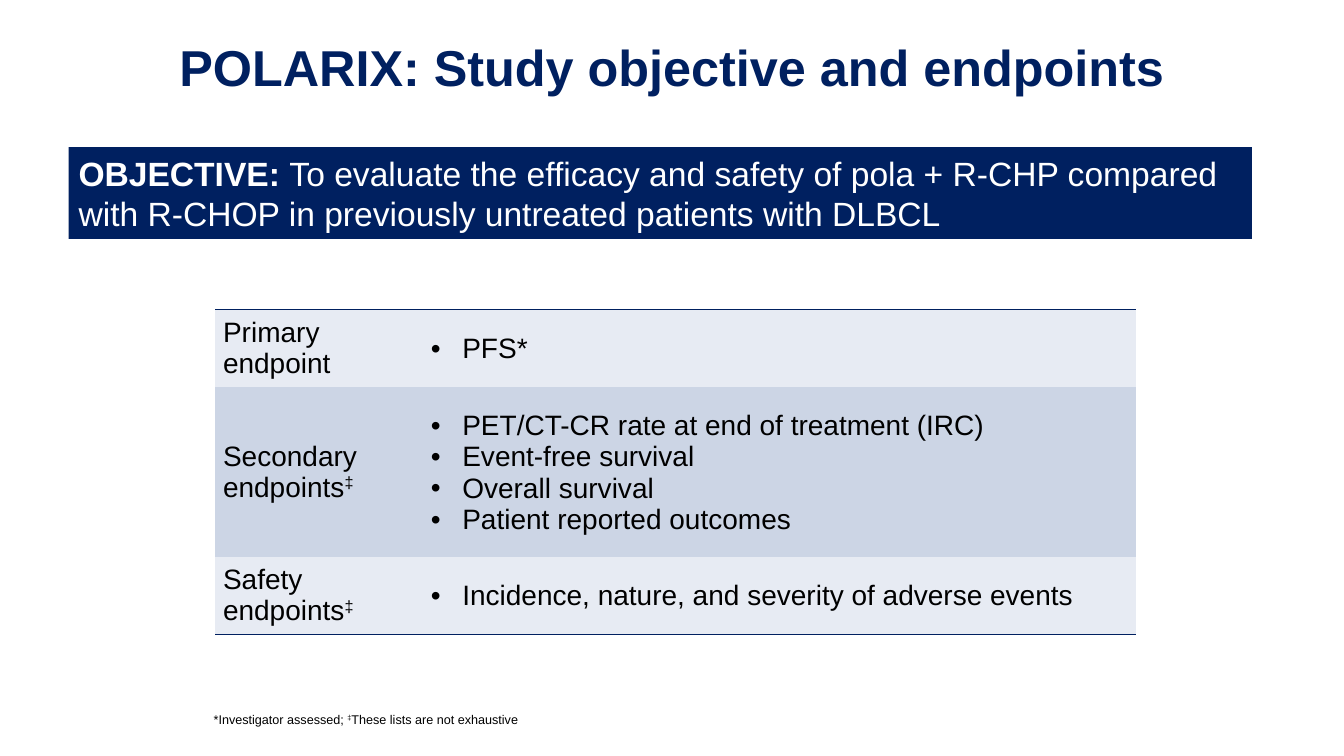
from lxml.etree import SubElement
from pptx import Presentation
from pptx.dml.color import RGBColor
from pptx.enum.shapes import MSO_SHAPE as Preset
from pptx.enum.text import MSO_ANCHOR as Anchor, MSO_AUTO_SIZE as AutoSize, PP_ALIGN as Align
from pptx.oxml import parse_xml
from pptx.oxml.ns import nsdecls, qn
from pptx.util import Cm, Pt

COLOURS = {"navy": "002060", "white": "FFFFFF", "black": "000000",
           "light": "E7EBF3", "dark": "CCD5E5"}
NO_STYLE = "{2D5ABB26-0587-4C30-8999-92F81FD0307C}"

# Label, footnote mark, bullet items
ENDPOINTS = [
    ("Primary endpoint", "", ["PFS*"]),
    ("Secondary endpoints", "‡", ["PET/CT-CR rate at end of treatment (IRC)",
                                  "Event-free survival",
                                  "Overall survival",
                                  "Patient reported outcomes"]),
    ("Safety endpoints", "‡", ["Incidence, nature, and severity of adverse events"]),
]


def rgb(name):
    return RGBColor.from_string(COLOURS[name])


def place(shape, left, top, width, height):
    shape.left, shape.top = Cm(left), Cm(top)
    shape.width, shape.height = Cm(width), Cm(height)


def add_run(para, text, size, colour="black", bold=False, raised=False):
    span = para.add_run()
    span.text = text
    font = span.font
    font.name, font.size, font.bold = "Arial", Pt(size), bold
    font.color.rgb = rgb(colour)
    if raised:
        span._r.get_or_add_rPr().set("baseline", "30000")


def set_bullet(para, char=None, indent=0):
    """Give the paragraph a bullet with a hanging indent, or none."""
    props = para._p.get_or_add_pPr()
    props.set("marL", str(Cm(indent)))
    props.set("indent", str(-Cm(indent)))
    if char:
        SubElement(props, qn("a:buFont"), typeface="Arial")
        SubElement(props, qn("a:buChar"), char=char)
    else:
        SubElement(props, qn("a:buNone"))


def fill_title(title):
    place(title, 1.47, 0.66, 30.94, 2.51)
    frame = title.text_frame
    frame.vertical_anchor = Anchor.MIDDLE
    para = frame.paragraphs[0]
    para.alignment = Align.CENTER
    para.line_spacing = Pt(30)
    add_run(para, "POLARIX: Study objective and endpoints", 36, "navy", bold=True)


def fill_footnote(body):
    place(body, 5.13, 17.45, 10.01, 0.99)
    frame = body.text_frame
    frame.vertical_anchor = Anchor.BOTTOM
    para = frame.paragraphs[0]
    set_bullet(para)
    add_run(para, "*Investigator assessed; ", 9)
    add_run(para, "‡", 9, raised=True)
    add_run(para, "These lists are not exhaustive", 9)


def add_objective(page):
    box = page.shapes.add_shape(Preset.RECTANGLE, Cm(1.73), Cm(3.71), Cm(29.82), Cm(2.31))
    box.shadow.inherit = False
    box.fill.solid()
    box.fill.fore_color.rgb = rgb("navy")
    box.line.fill.background()
    frame = box.text_frame
    frame.word_wrap = True
    frame.auto_size = AutoSize.SHAPE_TO_FIT_TEXT
    para = frame.paragraphs[0]
    para.alignment = Align.LEFT
    add_run(para, "OBJECTIVE: ", 24, "white", bold=True)
    add_run(para, "To evaluate the efficacy and safety of pola + R-CHP compared with "
                  "R-CHOP in previously untreated patients with DLBCL", 24, "white")


def format_cell(cell, colour, margins):
    cell.fill.solid()
    cell.fill.fore_color.rgb = rgb(colour)
    cell.vertical_anchor = Anchor.MIDDLE
    (cell.margin_left, cell.margin_top,
     cell.margin_right, cell.margin_bottom) = map(Cm, margins)


def add_border(cell, side):
    border = parse_xml(
        f'<a:{side} {nsdecls("a")} w="{Pt(1)}"><a:solidFill>'
        f'<a:srgbClr val="{COLOURS["navy"]}"/></a:solidFill></a:{side}>')
    cell._tc.get_or_add_tcPr().insert(0, border)


def add_endpoints(page):
    widths, heights = (5.41, 17.8), (1.96, 4.27, 1.96)
    frame = page.shapes.add_table(len(heights), len(widths), Cm(5.42), Cm(7.8),
                                  Cm(sum(widths)), Cm(sum(heights)))
    table = frame.table
    table.first_row = table.horz_banding = False
    table._tbl.tblPr.find(qn("a:tableStyleId")).text = NO_STYLE
    for column, width in zip(table.columns, widths):
        column.width = Cm(width)

    for index, (label, mark, items) in enumerate(ENDPOINTS):
        table.rows[index].height = Cm(heights[index])
        colour = ("light", "dark")[index % 2]
        label_cell, list_cell = table.cell(index, 0), table.cell(index, 1)
        format_cell(label_cell, colour, (0.2, 0.13, 0.2, 0.13))
        format_cell(list_cell, colour, (0.03, 0.03, 0.03, 0))

        para = label_cell.text_frame.paragraphs[0]
        add_run(para, label, 20)
        if mark:
            add_run(para, mark, 20, raised=True)

        lines = list_cell.text_frame
        for number, item in enumerate(items):
            para = lines.add_paragraph() if number else lines.paragraphs[0]
            set_bullet(para, "•", 0.79)
            add_run(para, item, 20)

    # Rules above and below the table
    for column in range(len(widths)):
        add_border(table.cell(0, column), "lnT")
        add_border(table.cell(len(heights) - 1, column), "lnB")


def main():
    deck = Presentation()
    deck.slide_width, deck.slide_height = Cm(33.87), Cm(19.05)
    page = deck.slides.add_slide(deck.slide_layouts[1])
    fill_title(page.shapes.title)
    fill_footnote(page.placeholders[1])
    add_objective(page)
    add_endpoints(page)
    deck.save("out.pptx")


if __name__ == "__main__":
    main()
